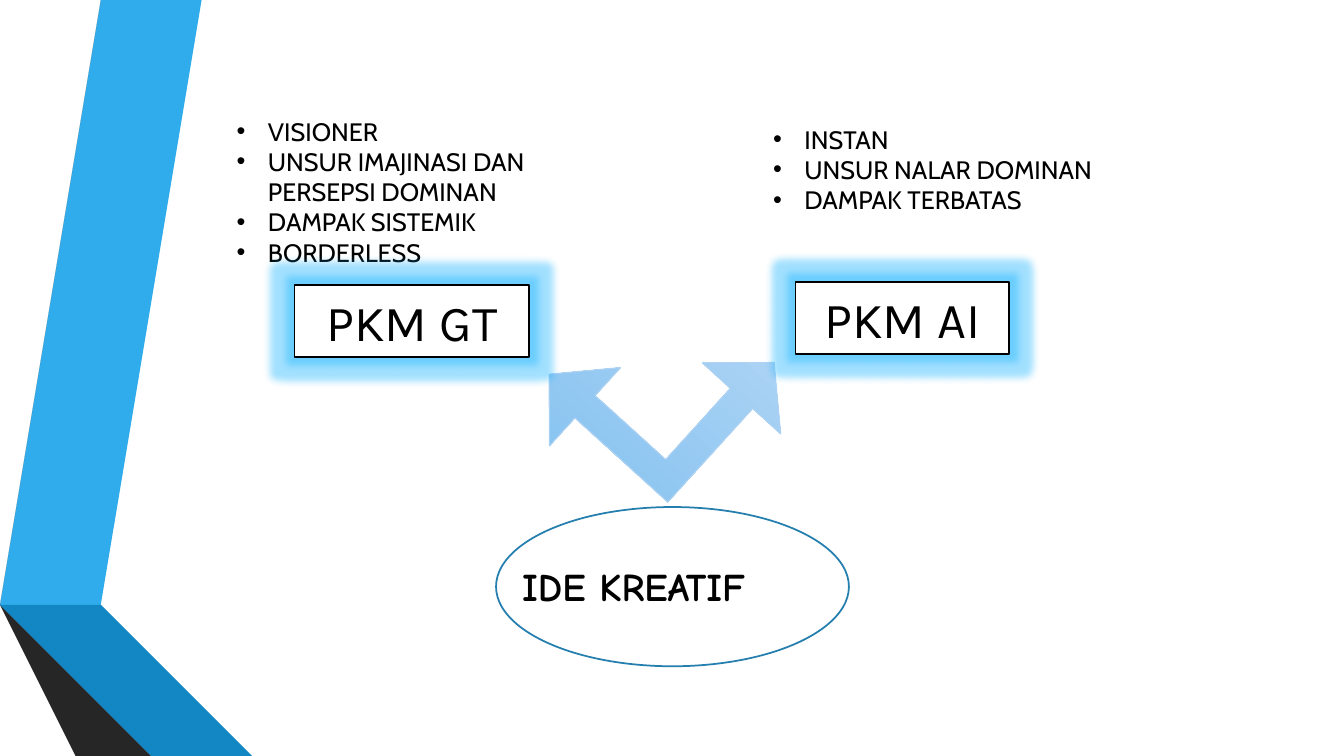
from lxml.etree import SubElement
from pptx import Presentation
from pptx.dml.color import RGBColor
from pptx.enum.shapes import MSO_SHAPE
from pptx.enum.text import MSO_ANCHOR, PP_ALIGN
from pptx.oxml.ns import qn
from pptx.util import Inches, Pt

BLACK = RGBColor(0x00, 0x00, 0x00)
WHITE = RGBColor(0xFF, 0xFF, 0xFF)
SKY = RGBColor(0x30, 0xAC, 0xEC)
BLUE = RGBColor(0x12, 0x87, 0xC3)
NAVY = RGBColor(0x0C, 0x5A, 0x82)
GREY = RGBColor(0x59, 0x59, 0x59)
DARK_GREY = RGBColor(0x40, 0x40, 0x40)
CHARCOAL = RGBColor(0x26, 0x26, 0x26)
OVAL_LINE = RGBColor(0x24, 0x7F, 0xAF)
ARROW_LIGHT = RGBColor(0xBC, 0xDA, 0xF6)
ARROW_DEEP = RGBColor(0x78, 0xBD, 0xEF)
ARROW_LINE = RGBColor(0xAE, 0xD2, 0xF4)
GLOW = RGBColor(0x18, 0xB4, 0xFF)

LIST_FONT = {"name": "Cabin", "size": Pt(18)}
IDEA_FONT = {"name": "Comic Neue", "size": Pt(28), "bold": True}
PROGRAM_FONT = {"name": "Karla", "size": Pt(36)}

# Corner points of each ribbon piece, in inches from the slide's top left
RIBBONS = [
    (SKY, [(0.5, 5.78), (0.77, 5.83), (1.73, 0), (1.45, 0)]),
    (GREY, [(1.39, 0), (1.11, 0), (0.16, 5.73), (0.44, 5.77)]),
    (CHARCOAL, [(0.16, 5.73), (1.45, 7.5), (1.51, 7.5)]),
    (NAVY, [(0.5, 5.79), (2.08, 7.5), (2.14, 7.5)]),
    (BLUE, [(0.5, 5.78), (2.14, 7.5), (2.83, 7.5), (0.77, 5.83)]),
    (DARK_GREY, [(2.02, 7.5), (0.48, 5.83), (0.43, 5.77), (0.16, 5.73),
                 (1.51, 7.5)]),
]

# Each program: traits and their box, name and its box (left, top, width, height)
PROGRAMS = [
    (["VISIONER", "UNSUR IMAJINASI DAN PERSEPSI DOMINAN",
      "DAMPAK SISTEMIK", "BORDERLESS"], (2.25, 1.1, 3.67, 1.62),
     "PKM GT", (2.92, 2.83, 2.33, 0.71)),
    (["INSTAN", "UNSUR NALAR DOMINAN", "DAMPAK TERBATAS"],
     (7.57, 1.18, 3.58, 1.01),
     "PKM AI", (7.89, 2.8, 2.12, 0.71)),
]


def format_font(paragraph, style):
    for attribute, value in style.items():
        setattr(paragraph.font, attribute, value)
    paragraph.font.color.rgb = BLACK


def add_outlined(slide, preset, box, line_color, line_width):
    shape = slide.shapes.add_shape(preset, *map(Inches, box))
    shape.shadow.inherit = False
    shape.line.color.rgb = line_color
    shape.line.width = Pt(line_width)
    return shape


def add_text(slide, box, lines, style):
    frame = slide.shapes.add_textbox(*map(Inches, box)).text_frame
    frame.word_wrap = True
    frame.text = "\n".join(lines)
    for paragraph in frame.paragraphs:
        format_font(paragraph, style)
    return frame


def add_ribbons(slide):
    for color, (start, *corners) in RIBBONS:
        builder = slide.shapes.build_freeform(*start, scale=Inches(1))
        builder.add_line_segments(corners, close=True)
        ribbon = builder.convert_to_shape()
        ribbon.shadow.inherit = False
        ribbon.fill.solid()
        ribbon.fill.fore_color.rgb = color
        ribbon.line.fill.background()


def add_traits(slide, box, traits):
    frame = add_text(slide, box, traits, LIST_FONT)
    for paragraph in frame.paragraphs:
        properties = paragraph._p.get_or_add_pPr()
        properties.set("marL", str(Inches(0.31)))
        properties.set("indent", str(-Inches(0.31)))
        # Bullet elements come before the font defaults
        bullet_font = properties.makeelement(qn("a:buFont"), {"typeface": "Arial"})
        bullet = properties.makeelement(qn("a:buChar"), {"char": "•"})
        properties.insert(0, bullet_font)
        properties.insert(1, bullet)


def add_program(slide, box, name):
    program = add_outlined(slide, MSO_SHAPE.RECTANGLE, box, BLACK, 1.25)
    program.fill.solid()
    program.fill.fore_color.rgb = WHITE
    # Soft blue glow
    effects = program._element.spPr.find(qn("a:effectLst"))
    glow = SubElement(effects, qn("a:glow"), rad=str(Pt(11)))
    color = SubElement(glow, qn("a:srgbClr"), val=str(GLOW))
    SubElement(color, qn("a:alpha"), val="40000")
    frame = program.text_frame
    frame.text = name
    frame.vertical_anchor = MSO_ANCHOR.MIDDLE
    frame.paragraphs[0].alignment = PP_ALIGN.CENTER
    format_font(frame.paragraphs[0], PROGRAM_FONT)


def add_idea(slide, box):
    left, top, width, height = box
    add_text(slide, (left + 0.16, top + 0.5, width - 0.33, 0.57),
             ["IDE KREATIF"], IDEA_FONT)
    oval = add_outlined(slide, MSO_SHAPE.OVAL, box, OVAL_LINE, 1.25)
    oval.fill.background()


def add_fork(slide, box):
    fork = add_outlined(slide, MSO_SHAPE.LEFT_UP_ARROW, box, ARROW_LINE, 0.75)
    fork.rotation = 42.2
    for index, value in enumerate((0.142, 0.25, 0.229)):
        fork.adjustments[index] = value
    fork.fill.gradient()
    fork.fill.gradient_angle = 270
    for stop, color in zip(fork.fill.gradient_stops, (ARROW_LIGHT, ARROW_DEEP)):
        stop.color.rgb = color


def main():
    deck = Presentation()
    deck.slide_width, deck.slide_height = Inches(13.33), Inches(7.5)
    slide = deck.slides.add_slide(deck.slide_layouts[6])
    add_ribbons(slide)
    add_idea(slide, (4.92, 5.03, 3.5, 1.58))
    add_fork(slide, (5.53, 2.97, 2.1, 2.11))
    for traits, traits_box, name, name_box in PROGRAMS:
        add_traits(slide, traits_box, traits)
        add_program(slide, name_box, name)
    deck.save("out.pptx")


if __name__ == "__main__":
    main()
